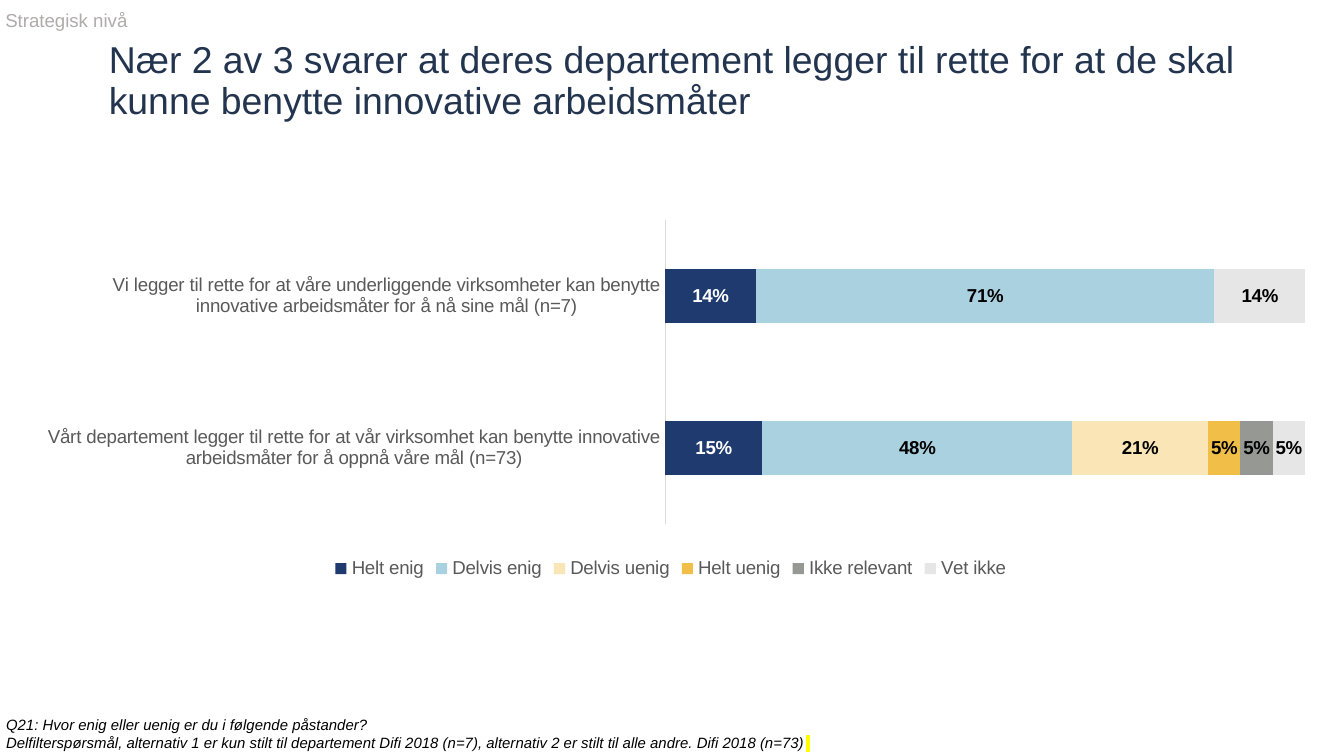
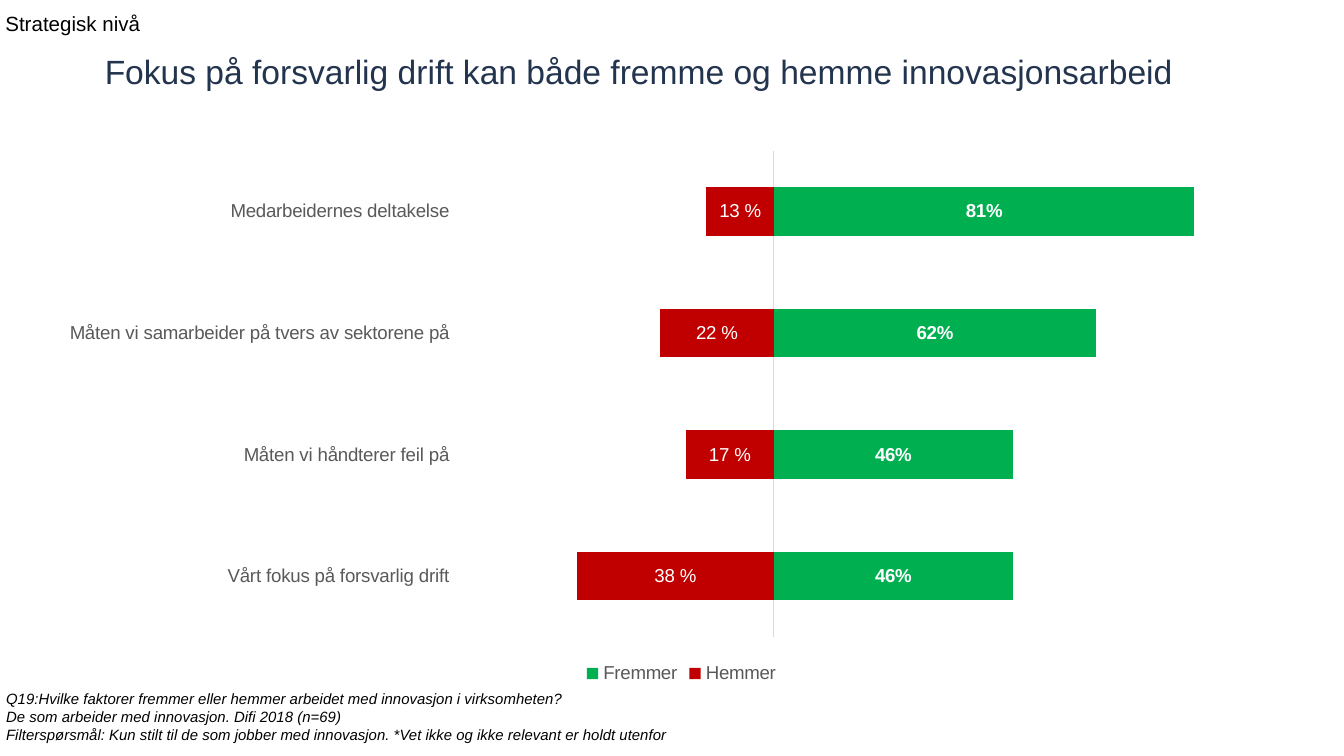
from dataclasses import dataclass, field

import lxml.etree
import pptx
import pptx.chart.chart
import pptx.chart.data
import pptx.chart.series
import pptx.dml.color
import pptx.enum.chart
import pptx.enum.text
import pptx.oxml.ns
import pptx.slide
import pptx.util

EMU_PER_PX = 4572
SLIDE_SIZE = (2000, 1125)


@dataclass(frozen=True)
class Theme:
    font: str = "Arial"
    title: str = "23344F"
    muted: str = "AFABAB"
    black: str = "000000"
    white: str = "FFFFFF"
    axis_text: str = "595959"
    axis_line: str = "D9D9D9"
    highlight: str = "FFFF00"
    navy: str = "1E3A6E"
    sky: str = "AAD1DF"
    cream: str = "F9E5B6"
    amber: str = "F1BE48"
    grey: str = "969894"
    pale: str = "E6E6E6"
    green: str = "00B050"
    red: str = "C00000"
    chart_pt: int = 10
    note_pt: int = 8
    axis_pt: float = 0.75
    title_spacing: float = 0.9


THEME = Theme()


@dataclass(frozen=True)
class Box:
    left: int
    top: int
    width: int
    height: int


@dataclass(frozen=True)
class Label:
    text: str
    box: Box
    size: int
    color: str


@dataclass(frozen=True)
class Note:
    lines: list[str]
    box: Box
    wrap: bool = True
    marked_end: bool = False


@dataclass(frozen=True)
class Answer:
    name: str
    values: list[float]
    color: str
    label_color: str = THEME.black
    custom_labels: list[str] = field(default_factory=list)


@dataclass(frozen=True)
class BarChart:
    box: Box
    kind: pptx.enum.chart.XL_CHART_TYPE
    categories: list[str]
    answers: list[Answer]
    gap: int
    minimum: float = 0
    plot: Box | None = None


@dataclass(frozen=True)
class SurveySlide:
    level: Label
    title: Label
    note: Note
    chart: BarChart


def px(n: int) -> pptx.util.Emu:
    return pptx.util.Emu(n * EMU_PER_PX)


def place(box: Box) -> tuple[pptx.util.Emu, ...]:
    return px(box.left), px(box.top), px(box.width), px(box.height)


def set_font(font, size: int, color: str, bold: bool = False, italic: bool = False) -> None:
    font.name = THEME.font
    font.size = pptx.util.Pt(size)
    font.bold = bold
    font.italic = italic
    font.color.rgb = pptx.dml.color.RGBColor.from_string(color)


def add_frame(s: pptx.slide.Slide, box: Box, wrap: bool = True):
    tf = s.shapes.add_textbox(*place(box)).text_frame
    tf.margin_left = tf.margin_top = tf.margin_right = tf.margin_bottom = 0
    tf.word_wrap = wrap
    return tf


def add_label(s: pptx.slide.Slide, label: Label, spacing: float = 1.0) -> None:
    tf = add_frame(s, label.box)
    tf.vertical_anchor = pptx.enum.text.MSO_ANCHOR.BOTTOM
    p = tf.paragraphs[0]
    p.text = label.text
    p.line_spacing = spacing
    set_font(p.font, label.size, label.color)


def add_marked_space(p) -> None:
    r = p.add_run()
    r.text = " "
    qn = pptx.oxml.ns.qn
    mark = lxml.etree.SubElement(r.font._element, qn("a:highlight"))
    lxml.etree.SubElement(mark, qn("a:srgbClr"), val=THEME.highlight)


def add_note(s: pptx.slide.Slide, note: Note) -> None:
    tf = add_frame(s, note.box, note.wrap)
    tf.auto_size = pptx.enum.text.MSO_AUTO_SIZE.SHAPE_TO_FIT_TEXT
    tf.text = "\n".join(note.lines)
    for p in tf.paragraphs:
        p._p.get_or_add_pPr().set("marL", str(px(1)))
        set_font(p.font, THEME.note_pt, THEME.black, italic=True)
    if note.marked_end:
        add_marked_space(tf.paragraphs[-1])


def set_plot_area(chart: pptx.chart.chart.Chart, box: Box, plot: Box) -> None:
    qn = pptx.oxml.ns.qn
    area = chart._chartSpace.chart.plotArea
    for old in area.findall(qn("c:layout")):
        area.remove(old)
    layout = lxml.etree.Element(qn("c:layout"))
    manual = lxml.etree.SubElement(layout, qn("c:manualLayout"))
    settings = [
        ("layoutTarget", "inner"), ("xMode", "edge"), ("yMode", "edge"),
        ("x", plot.left / box.width), ("y", plot.top / box.height),
        ("w", plot.width / box.width), ("h", plot.height / box.height),
    ]
    for tag, value in settings:
        lxml.etree.SubElement(manual, qn(f"c:{tag}"), val=str(value))
    area.insert(0, layout)


def style_series(series: pptx.chart.series.BarSeries, answer: Answer) -> None:
    series.format.fill.solid()
    series.format.fill.fore_color.rgb = pptx.dml.color.RGBColor.from_string(answer.color)
    series.invert_if_negative = False
    labels = series.data_labels
    labels.show_value = True
    labels.number_format = "0%;-0%;" if 0 in answer.values else "0%"
    labels.number_format_is_linked = False
    labels.position = pptx.enum.chart.XL_LABEL_POSITION.CENTER
    set_font(labels.font, THEME.chart_pt, answer.label_color, bold=True)
    for i, text in enumerate(answer.custom_labels):
        label = series.points[i].data_label
        r = label.text_frame.paragraphs[0].add_run()
        r.text = text
        set_font(r.font, THEME.chart_pt, answer.label_color)
        label.position = pptx.enum.chart.XL_LABEL_POSITION.CENTER


def style_axes(chart: pptx.chart.chart.Chart, minimum: float) -> None:
    axis = chart.category_axis
    axis.major_tick_mark = pptx.enum.chart.XL_TICK_MARK.NONE
    axis.minor_tick_mark = pptx.enum.chart.XL_TICK_MARK.NONE
    if minimum < 0:
        axis.tick_label_position = pptx.enum.chart.XL_TICK_LABEL_POSITION.LOW
    axis.format.line.width = pptx.util.Pt(THEME.axis_pt)
    axis.format.line.color.rgb = pptx.dml.color.RGBColor.from_string(THEME.axis_line)
    set_font(axis.tick_labels.font, THEME.chart_pt, THEME.axis_text)
    scale = chart.value_axis
    scale.minimum_scale, scale.maximum_scale = minimum, 1
    scale.has_major_gridlines = False
    scale.tick_labels.number_format = "0%"
    scale.tick_labels.number_format_is_linked = False
    scale.visible = False


def add_bar_chart(s: pptx.slide.Slide, bars: BarChart) -> None:
    data = pptx.chart.data.CategoryChartData(number_format="0%")
    data.categories = bars.categories
    for answer in bars.answers:
        data.add_series(answer.name, answer.values)
    chart = s.shapes.add_chart(bars.kind, *place(bars.box), data).chart
    chart.has_title = False
    set_font(chart.font, THEME.chart_pt, THEME.black)
    chart.has_legend = True
    chart.legend.position = pptx.enum.chart.XL_LEGEND_POSITION.BOTTOM
    chart.legend.include_in_layout = False
    set_font(chart.legend.font, THEME.chart_pt, THEME.axis_text)
    plot = chart.plots[0]
    plot.gap_width = bars.gap
    plot.overlap = 100
    plot.vary_by_categories = False
    for series, answer in zip(plot.series, bars.answers):
        style_series(series, answer)
    style_axes(chart, bars.minimum)
    if bars.plot:
        set_plot_area(chart, bars.box, bars.plot)


LEVEL = "Strategisk nivå"

SLIDES = [
    SurveySlide(
        Label(LEVEL, Box(8, -18, 1472, 64), 10, THEME.muted),
        Label("Nær 2 av 3 svarer at deres departement legger til rette for at de skal "
              "kunne benytte innovative arbeidsmåter",
              Box(162, 48, 1754, 134), 20, THEME.title),
        Note(["Q21: Hvor enig eller uenig er du i følgende påstander?",
              "Delfilterspørsmål, alternativ 1 er kun stilt til departement Difi 2018 (n=7), "
              "alternativ 2 er stilt til alle andre. Difi 2018 (n=73)"],
             Box(8, 1065, 1208, 54), wrap=False, marked_end=True),
        BarChart(
            Box(54, 300, 1888, 570),
            pptx.enum.chart.XL_CHART_TYPE.BAR_STACKED_100,
            ["Vårt departement legger til rette for at vår virksomhet kan benytte "
             "innovative arbeidsmåter for å oppnå våre mål (n=73)",
             "Vi legger til rette for at våre underliggende virksomheter kan benytte "
             "innovative arbeidsmåter for å nå sine mål (n=7)"],
            [Answer("Helt enig", [0.15, 0.14], THEME.navy, THEME.white),
             Answer("Delvis enig", [0.48, 0.71], THEME.sky),
             Answer("Delvis uenig", [0.21, 0], THEME.cream),
             Answer("Helt uenig", [0.05, 0], THEME.amber),
             Answer("Ikke relevant", [0.05, 0], THEME.grey),
             Answer("Vet ikke", [0.05, 0.14], THEME.pale)],
            gap=182, plot=Box(936, 27, 952, 453)),
    ),
    SurveySlide(
        Label(LEVEL, Box(8, -11, 1472, 64), 11, THEME.black),
        Label("Fokus på forsvarlig drift kan både fremme og hemme innovasjonsarbeid",
              Box(156, 64, 1760, 72), 18, THEME.title),
        Note(["Q19:Hvilke faktorer fremmer eller hemmer arbeidet med innovasjon i virksomheten?",
              "De som arbeider med innovasjon. Difi 2018 (n=69)",
              "Filterspørsmål: Kun stilt til de som jobber med innovasjon. "
              "*Vet ikke og ikke relevant er holdt utenfor"],
             Box(8, 1027, 1718, 80)),
        BarChart(
            Box(66, 208, 1896, 818),
            pptx.enum.chart.XL_CHART_TYPE.BAR_STACKED,
            ["Vårt fokus på forsvarlig drift", "Måten vi håndterer feil på",
             "Måten vi samarbeider på tvers av sektorene på", "Medarbeidernes deltakelse"],
            [Answer("Fremmer", [0.46, 0.46, 0.62, 0.81], THEME.green, THEME.white),
             Answer("Hemmer", [-0.38, -0.17, -0.22, -0.13], THEME.red, THEME.white,
                    ["38 %", "17 %", "22 %", "13 %"])],
            gap=150, minimum=-0.6),
    ),
]


def main() -> None:
    prs = pptx.Presentation()
    prs.slide_width, prs.slide_height = map(px, SLIDE_SIZE)
    for survey in SLIDES:
        s = prs.slides.add_slide(prs.slide_layouts[6])
        add_label(s, survey.title, THEME.title_spacing)
        add_note(s, survey.note)
        add_bar_chart(s, survey.chart)
        add_label(s, survey.level)
    prs.save("out.pptx")


if __name__ == "__main__":
    main()
